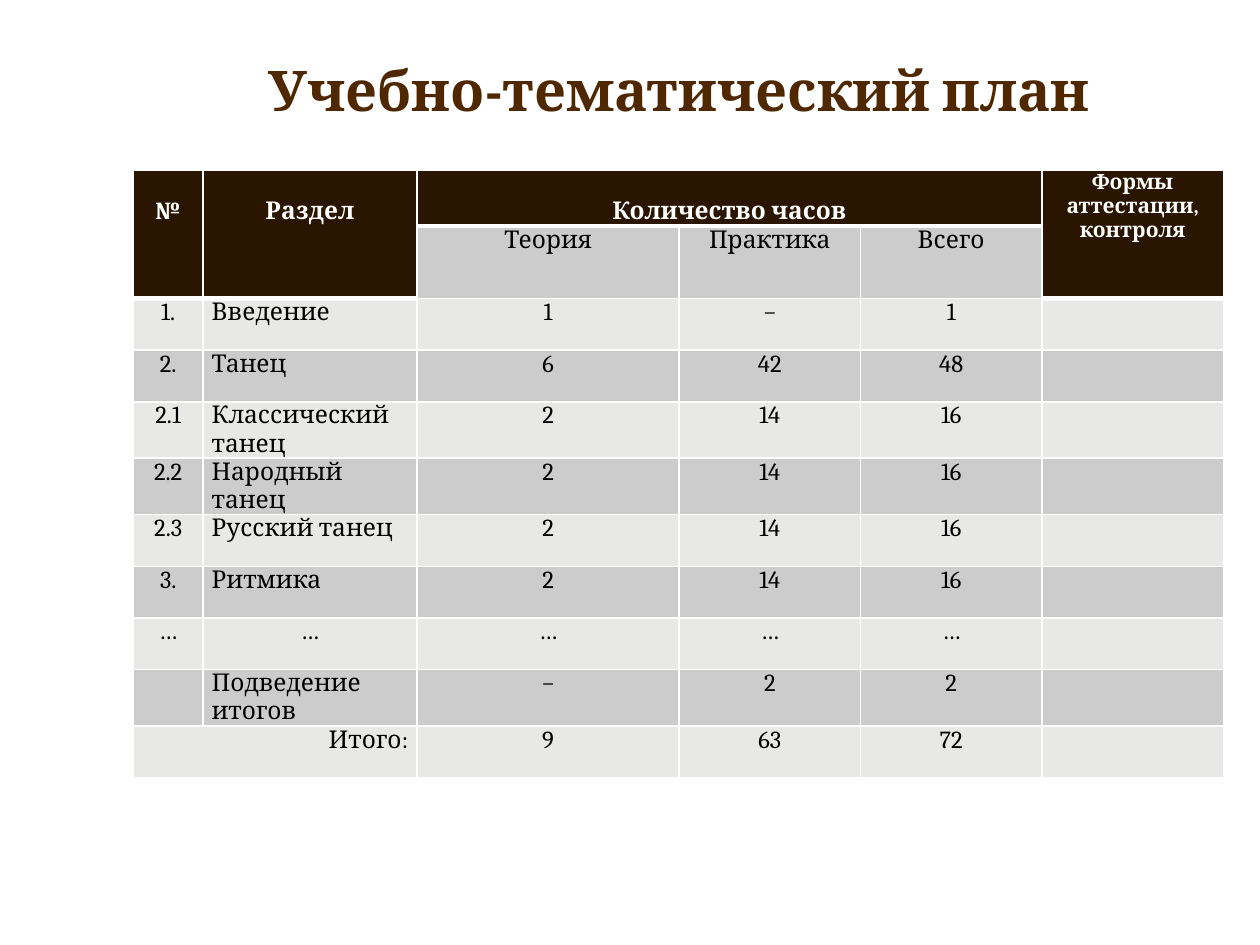
from dataclasses import dataclass

from lxml import etree
from pptx import Presentation
from pptx.dml.color import RGBColor
from pptx.enum.text import MSO_ANCHOR, MSO_AUTO_SIZE, PP_ALIGN
from pptx.oxml.ns import qn
from pptx.util import Inches, Pt

LEFT, CENTER, RIGHT, JUSTIFY = (
    PP_ALIGN.LEFT, PP_ALIGN.CENTER, PP_ALIGN.RIGHT, PP_ALIGN.JUSTIFY)
MIDDLE, TOP = MSO_ANCHOR.MIDDLE, MSO_ANCHOR.TOP
NO_AUTOFIT = MSO_AUTO_SIZE.NONE


@dataclass(frozen=True)
class Theme:
    font: str = "Cambria"
    title_color: str = "502800"
    header_fill: str = "2A1500"
    header_text: str = "FFFFFF"
    body_text: str = "000000"
    border: str = "FFFFFF"
    dark_band: str = "CDCCCC"
    light_band: str = "E8E8E7"
    title_size: int = 32
    body_size: int = 14
    small_size: int = 12


@dataclass(frozen=True)
class Section:
    number: str
    name: str
    theory: str
    practice: str
    total: str
    align: PP_ALIGN = JUSTIFY


@dataclass(frozen=True)
class Heading:
    text: str
    column: int
    last_row: int
    last_column: int
    size: int
    top: float


THEME = Theme()
LINE = 0.22  # one line of body text, in inches
ROW_HEIGHT = 0.41
COLUMN_WIDTHS = (0.55, 1.7, 2.08, 1.44, 1.44, 1.44)
HEADINGS = (
    Heading("№", 0, 1, 0, THEME.body_size, LINE),
    Heading("Раздел", 1, 1, 1, THEME.body_size, LINE),
    Heading("Количество часов", 2, 0, 4, THEME.body_size, LINE),
    Heading("Формы аттестации, контроля", 5, 1, 5, THEME.small_size, 0),
)
HOUR_KINDS = ("Теория", "Практика", "Всего")
SECTIONS = (
    Section("1.", "Введение", "1", "−", "1"),
    Section("2.", "Танец", "6", "42", "48"),
    Section("2.1", "Классический танец", "2", "14", "16", LEFT),
    Section("2.2", "Народный танец", "2", "14", "16", LEFT),
    Section("2.3", "Русский танец", "2", "14", "16", LEFT),
    Section("3.", "Ритмика", "2", "14", "16"),
    Section("…", "…", "…", "…", "…", CENTER),
    Section("", "Подведение итогов", "−", "2", "2"),
    Section("Итого:", "", "9", "63", "72"),
)


def style_font(font, size: int, color: str, bold: bool) -> None:
    font.name = THEME.font
    font.size = Pt(size)
    font.bold = bold
    font.color.rgb = RGBColor.from_string(color)


def add_borders(cell, bottom: float) -> None:
    properties = cell._tc.get_or_add_tcPr()
    for side, width in (("L", 1), ("R", 1), ("T", 1), ("B", bottom)):
        line = etree.SubElement(properties, qn(f"a:ln{side}"), w=str(Pt(width)))
        fill = etree.SubElement(line, qn("a:solidFill"))
        etree.SubElement(fill, qn("a:srgbClr"), val=THEME.border)


def fill_cell(cell, text: str, fill: str, align: PP_ALIGN = CENTER,
              size: int = THEME.body_size, color: str = THEME.body_text,
              bold: bool = False, top: float = 0, bottom_border: float = 1) -> None:
    add_borders(cell, bottom_border)
    cell.fill.solid()
    cell.fill.fore_color.rgb = RGBColor.from_string(fill)
    cell.margin_left = cell.margin_right = Inches(0.07)
    cell.margin_top, cell.margin_bottom = Inches(top), 0
    cell.vertical_anchor = TOP
    para = cell.text_frame.paragraphs[0]
    para.text = text
    para.alignment = align
    style_font(para.font, size, color, bold)
    for span in para.runs:
        style_font(span.font, size, color, bold)


def add_title(page, text: str) -> None:
    title = page.shapes.title
    title.left, title.top = Inches(1.06), Inches(0.3)
    title.width, title.height = Inches(8.66), Inches(0.81)
    frame = title.text_frame
    frame.text = text
    frame.auto_size = NO_AUTOFIT
    frame.vertical_anchor = MIDDLE
    para = frame.paragraphs[0]
    para.alignment = CENTER
    style_font(para.runs[0].font, THEME.title_size, THEME.title_color, True)


def add_plan(page) -> None:
    row_count = len(SECTIONS) + 2
    table = page.shapes.add_table(
        row_count, len(COLUMN_WIDTHS), Inches(1.06), Inches(1.35),
        Inches(sum(COLUMN_WIDTHS)), Inches(ROW_HEIGHT * row_count)).table
    for column, width in zip(table.columns, COLUMN_WIDTHS):
        column.width = Inches(width)
    for row in table.rows:
        row.height = Inches(ROW_HEIGHT)

    # Two-level header
    for heading in HEADINGS:
        cell = table.cell(0, heading.column)
        cell.merge(table.cell(heading.last_row, heading.last_column))
        fill_cell(cell, heading.text, THEME.header_fill, size=heading.size,
                  color=THEME.header_text, bold=True, top=heading.top,
                  bottom_border=3)
    for column, kind in enumerate(HOUR_KINDS, start=2):
        fill_cell(table.cell(1, column), kind, THEME.dark_band)

    # Sections in alternating bands; the last row holds the totals
    total_row = row_count - 1
    for row, section in enumerate(SECTIONS, start=2):
        band = THEME.dark_band if row % 2 else THEME.light_band
        is_total = row == total_row
        values = (section.number, section.name, section.theory,
                  section.practice, section.total, "")
        for column, value in enumerate(values):
            align = section.align if column == 1 else CENTER
            if is_total and column == 0:
                align = RIGHT
            fill_cell(table.cell(row, column), value, band, align)
    table.cell(total_row, 0).merge(table.cell(total_row, 1))


def main() -> None:
    deck = Presentation()
    deck.slide_width, deck.slide_height = Inches(10), Inches(7.5)
    page = deck.slides.add_slide(deck.slide_layouts[5])
    add_title(page, "Учебно-тематический план")
    add_plan(page)
    deck.save("out.pptx")


if __name__ == "__main__":
    main()
